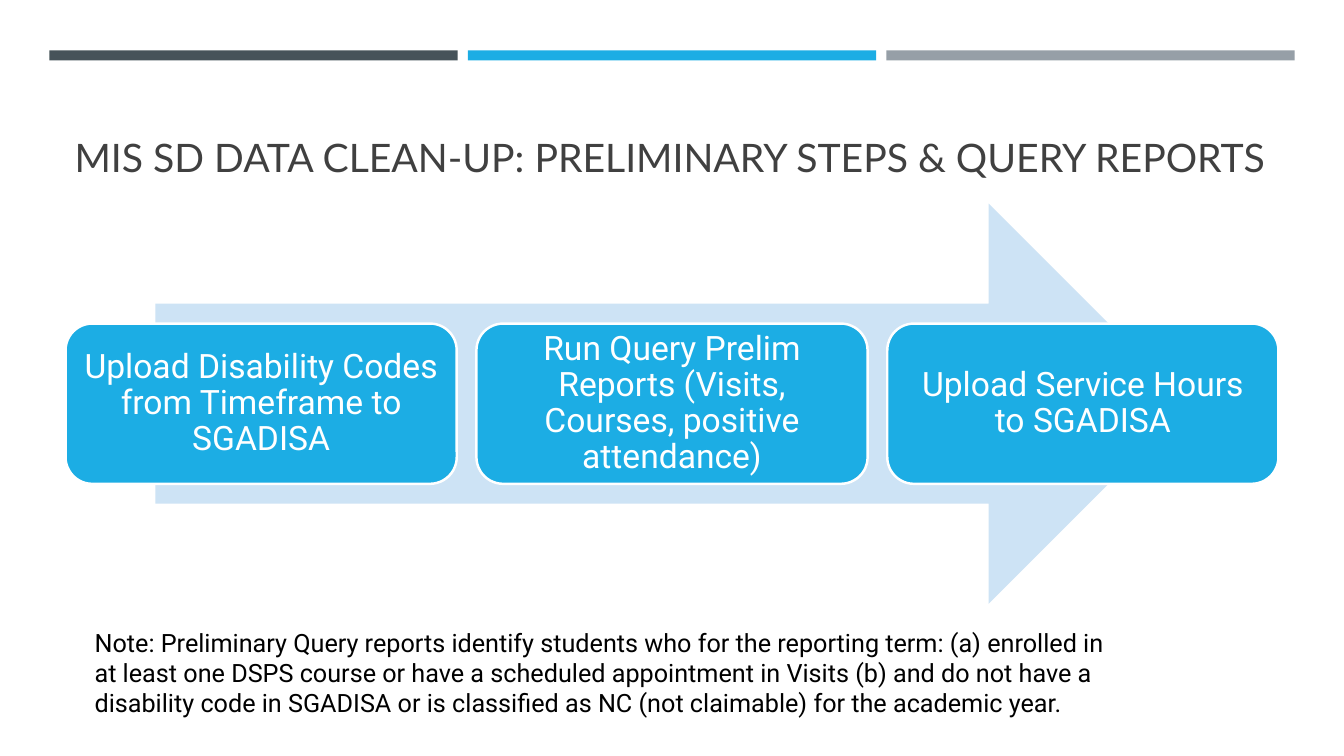
from pptx import Presentation
from pptx.dml.color import RGBColor
from pptx.enum import shapes as kinds, text as txt
from pptx.util import Inches, Pt

KIND = kinds.MSO_SHAPE


def style(paragraph, font, size, color):
    paragraph.font.name = font
    paragraph.font.size = Pt(size)
    paragraph.font.color.rgb = RGBColor.from_string(color)


def add_block(kind, left, top, width, height, fill):
    block = slide.shapes.add_shape(
        kind, Inches(left), Inches(top), Inches(width), Inches(height))
    block.shadow.inherit = False
    block.fill.solid()
    block.fill.fore_color.rgb = RGBColor.from_string(fill)
    block.line.fill.background()
    return block


prs = Presentation()
prs.slide_width = Inches(13.33)
prs.slide_height = Inches(7.5)
slide = prs.slides.add_slide(prs.slide_layouts[5])

for i, color in enumerate(["465359", "1CADE4", "969FA7"]):
    add_block(KIND.RECTANGLE, 0.49 + 4.15 * i, 0.5, 4.05, 0.1, color)

heading = slide.shapes.title
heading.left, heading.top = Inches(0.64), Inches(0.77)
heading.width, heading.height = Inches(12.06), Inches(1.07)
heading.text_frame.text = "MIS SD DATA CLEAN-UP: PRELIMINARY STEPS & QUERY REPORTS"
heading.text_frame.auto_size = txt.MSO_AUTO_SIZE.NONE
heading.text_frame.vertical_anchor = txt.MSO_ANCHOR.BOTTOM
heading.text_frame.paragraphs[0].alignment = txt.PP_ALIGN.LEFT
style(heading.text_frame.paragraphs[0], "Lato", 28, "404040")

add_block(KIND.RIGHT_ARROW, 1.54, 2.02, 10.25, 3.97, "CDE3F5")

steps = [
    "Upload Disability Codes from Timeframe to SGADISA",
    "Run Query Prelim Reports (Visits, Courses, positive attendance)",
    "Upload Service Hours to SGADISA",
]
for i, wording in enumerate(steps):
    step = add_block(KIND.ROUNDED_RECTANGLE, 0.65 + 4.075 * i, 3.21, 3.88, 1.59, "1CADE4")
    step.line.color.rgb = RGBColor.from_string("FFFFFF")
    step.line.width = Pt(1.75)
    frame = step.text_frame
    frame.text = wording
    frame.word_wrap = True
    frame.vertical_anchor = txt.MSO_ANCHOR.MIDDLE
    frame.margin_left = frame.margin_right = Inches(0.1)
    frame.margin_top = frame.margin_bottom = Inches(0.1)
    frame.paragraphs[0].alignment = txt.PP_ALIGN.CENTER
    frame.paragraphs[0].line_spacing = 0.9
    style(frame.paragraphs[0], "Roboto", 24, "FFFFFF")

note = slide.shapes.add_textbox(
    Inches(0.84), Inches(6.17), Inches(10.34), Inches(1.01)).text_frame
note.word_wrap = True
note.auto_size = txt.MSO_AUTO_SIZE.SHAPE_TO_FIT_TEXT
note.text = (
    "Note: Preliminary Query reports identify students who for the reporting term: "
    "(a) enrolled in at least one DSPS course or have a scheduled appointment in Visits "
    "(b) and do not have a disability code in SGADISA or is classified as NC "
    "(not claimable) for the academic year."
)
style(note.paragraphs[0], "Roboto", 18, "000000")

prs.save("out.pptx")
